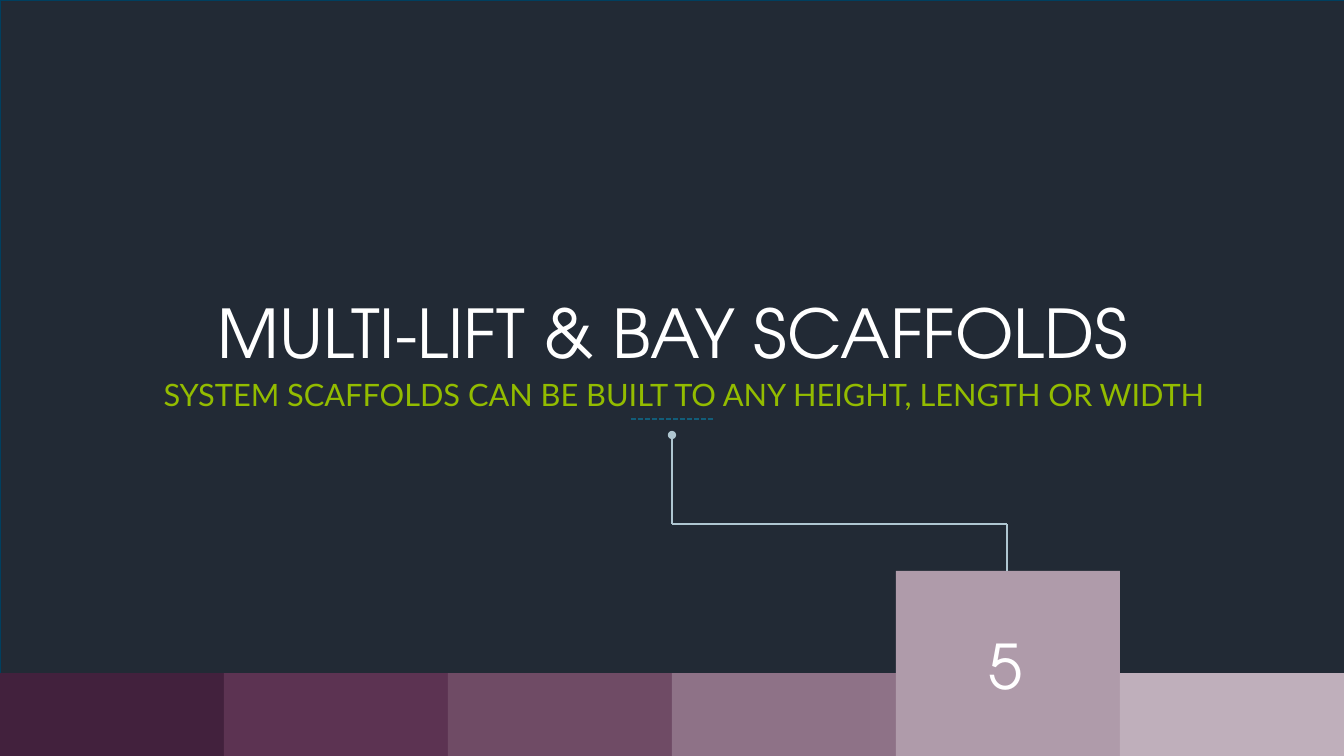
from dataclasses import dataclass

from lxml import etree
from pptx import Presentation
from pptx import util as u
from pptx.dml.color import RGBColor
from pptx.enum import dml, shapes, text
from pptx.oxml.ns import qn

EMU_PER_PX = 914400 / 100.8
WIDTH, HEIGHT = 1344, 756


def px(*lengths):
    return [u.Emu(round(n * EMU_PER_PX)) for n in lengths]


@dataclass(frozen=True)
class Theme:
    backdrop: str = "222A35"
    edge: str = "003F5F"
    bands: tuple = ("42213D", "5C3352", "6F4B65", "8E7287", "AF9BAA", "BFAFBB")
    light: str = "FFFFFF"
    accent: str = "93BC00"
    connector: str = "AFC6D1"
    dash: str = "125D79"
    heading_font: str = "TeX Gyre Adventor"
    body_font: str = "Lato"
    title_size: int = 48
    subtitle_size: int = 22
    number_size: int = 44
    line_width: float = 1.25
    edge_width: float = 0.5


class SlideBuilder:
    def __init__(self, slide, theme):
        self.slide = slide
        self.theme = theme

    def block(self, box, fill, edge=None):
        rect = self.slide.shapes.add_shape(shapes.MSO_SHAPE.RECTANGLE, *px(*box))
        rect.shadow.inherit = False
        rect.fill.solid()
        rect.fill.fore_color.rgb = RGBColor.from_string(fill)
        if edge:
            rect.line.color.rgb = RGBColor.from_string(edge)
            rect.line.width = u.Pt(self.theme.edge_width)
        else:
            rect.line.fill.background()

    def line(self, start, end, color, dashed=False, dot=False):
        link = self.slide.shapes.add_connector(
            shapes.MSO_CONNECTOR.STRAIGHT, *px(*start, *end))
        link.line.color.rgb = RGBColor.from_string(color)
        link.line.width = u.Pt(self.theme.line_width)
        if dashed:
            link.line.dash_style = dml.MSO_LINE.SQUARE_DOT
        properties = link._element.spPr
        if dot:
            etree.SubElement(properties.find(qn("a:ln")), qn("a:headEnd"), type="oval")
        etree.SubElement(properties, qn("a:effectLst"))

    def set_words(self, holder, box, words, font, size, color, align, wrap=True):
        holder.left, holder.top, holder.width, holder.height = px(*box)
        frame = holder.text_frame
        frame.text = words
        frame.word_wrap = wrap
        frame.auto_size = text.MSO_AUTO_SIZE.NONE
        frame.vertical_anchor = text.MSO_ANCHOR.TOP
        paragraph = frame.paragraphs[0]
        paragraph.alignment = align
        paragraph.line_spacing = 1.0
        paragraph.space_before = u.Pt(0)
        run = paragraph.runs[0]
        run.font.name = font
        run.font.size = u.Pt(size)
        run.font.color.rgb = RGBColor.from_string(color)

    def label(self, box, *style):
        self.set_words(self.slide.shapes.add_textbox(*px(*box)), box, *style)

    def to_front(self, holder):
        self.slide.shapes._spTree.append(holder._element)


def main():
    deck = Presentation()
    deck.slide_width, deck.slide_height = px(WIDTH, HEIGHT)
    slide = deck.slides.add_slide(deck.slide_layouts[0])
    theme = Theme()
    build = SlideBuilder(slide, theme)

    # Backdrop and colour bands; the section band stands taller
    build.block((0, 0, WIDTH, HEIGHT), theme.backdrop, theme.edge)
    band_width = WIDTH // len(theme.bands)
    section, section_top = 4, 571
    for i, color in enumerate(theme.bands):
        top = section_top if i == section else 673
        build.block((i * band_width, top, band_width, HEIGHT - top), color)

    # Connector from the heading down to the section number
    heading_x, section_x, turn_y = WIDTH // 2, 1007, 524
    build.line((section_x, turn_y), (heading_x, turn_y), theme.connector)
    build.line((section_x, turn_y), (section_x, section_top), theme.connector)
    build.line((heading_x, 435), (heading_x, turn_y), theme.connector, dot=True)

    # Heading
    center = text.PP_ALIGN.CENTER
    title, subtitle = slide.shapes.title, slide.placeholders[1]
    build.set_words(title, (204, 286, 938, 92), "MULTI-LIFT & BAY SCAFFOLDS",
                    theme.heading_font, theme.title_size, theme.light, center, False)
    build.set_words(subtitle, (110, 371, 1148, 47),
                    "SYSTEM SCAFFOLDS CAN BE BUILT TO ANY HEIGHT, LENGTH OR WIDTH",
                    theme.body_font, theme.subtitle_size, theme.accent, center)
    build.to_front(title)
    build.to_front(subtitle)
    build.line((631, 419), (713, 419), theme.dash, dashed=True)

    # Section number
    build.label((979, 623, 62, 85), "5", theme.heading_font, theme.number_size,
                theme.light, text.PP_ALIGN.LEFT)

    deck.save("out.pptx")


if __name__ == "__main__":
    main()
